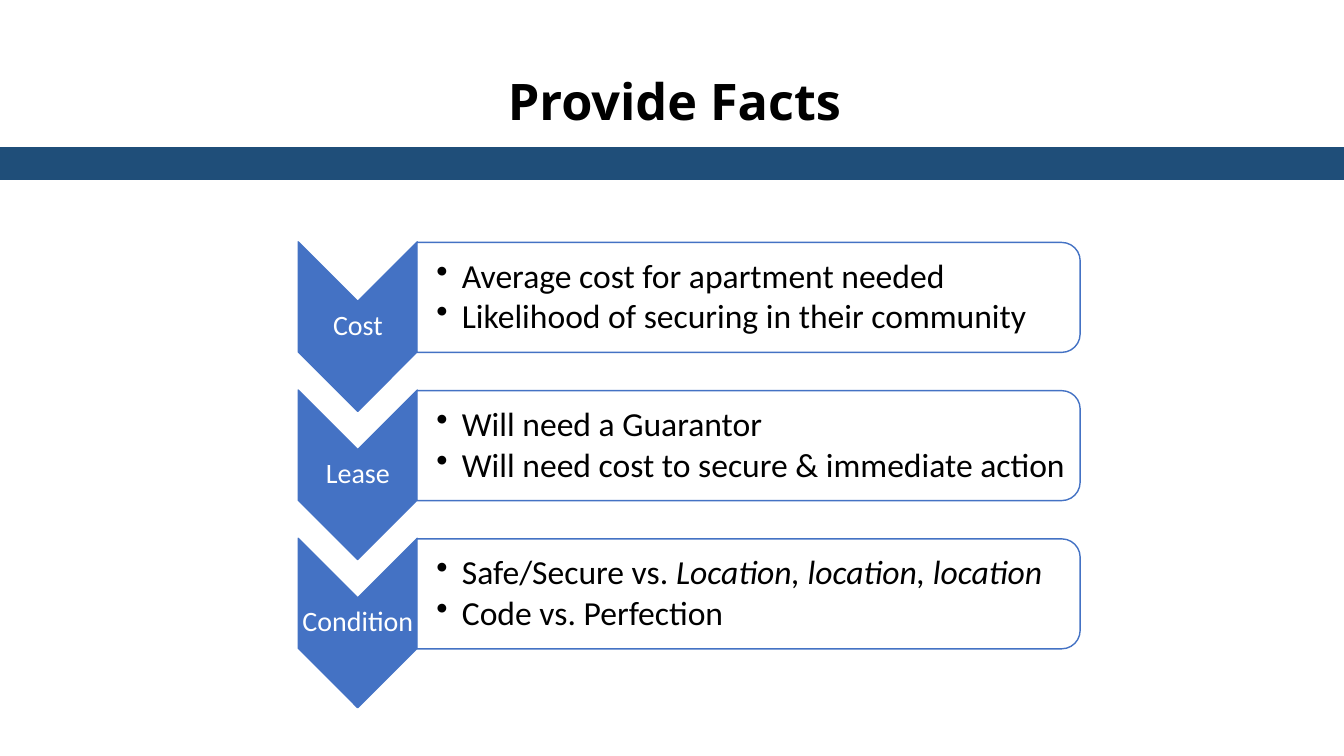
from lxml.etree import SubElement
from pptx import Presentation
from pptx.dml.color import RGBColor
from pptx.enum.shapes import MSO_SHAPE
from pptx.enum.text import MSO_ANCHOR, MSO_AUTO_SIZE, PP_ALIGN
from pptx.oxml.ns import qn
from pptx.util import Cm, Pt

NAVY, BLUE, WHITE, BLACK = "1F4E79", "4472C4", "FFFFFF", "000000"
FACTS = [
    ("Cost", [[("Average cost for apartment needed", False)],
              [("Likelihood of securing in their community", False)]]),
    ("Lease", [[("Will need a Guarantor", False)],
               [("Will need cost to secure & immediate action", False)]]),
    ("Condition", [[("Safe/Secure vs. ", False), ("Location, location, location", True)],
                   [("Code vs. Perfection", False)]]),
]
ROW_PITCH = 3.735


def add_block(kind, left, top, width, height, fill, line):
    block = page.shapes.add_shape(kind, Cm(left), Cm(top), Cm(width), Cm(height))
    block.shadow.inherit = False
    block.fill.solid()
    block.fill.fore_color.rgb = RGBColor.from_string(fill)
    block.line.color.rgb = RGBColor.from_string(line)
    block.line.width = Pt(1)
    return block


def add_span(para, text, font, size, colour):
    span = para.add_run()
    span.text = text
    span.font.name = font
    span.font.size = Pt(size)
    span.font.color.rgb = RGBColor.from_string(colour)
    return span


deck = Presentation()
deck.slide_width, deck.slide_height = Cm(33.87), Cm(19.05)
page = deck.slides.add_slide(deck.slide_layouts[5])

title = page.shapes.title
title.left, title.top, title.width, title.height = Cm(1.47), Cm(1.63), Cm(31.06), Cm(3.68)
title.text_frame.vertical_anchor = MSO_ANCHOR.TOP
title.text_frame.auto_size = MSO_AUTO_SIZE.NONE
title_para = title.text_frame.paragraphs[0]
title_para.alignment = PP_ALIGN.CENTER
add_span(title_para, "Provide Facts", "Open Sans", 36, BLACK).font.bold = True

add_block(MSO_SHAPE.RECTANGLE, 0, 3.73, 33.87, 0.8, NAVY, NAVY)

for row, (name, points) in enumerate(FACTS):
    shift = row * ROW_PITCH

    chevron = add_block(MSO_SHAPE.CHEVRON, 6.88, 6.73 + shift, 4.27, 3, BLUE, BLUE)
    chevron.rotation = 90

    label = page.shapes.add_textbox(Cm(7.52), Cm(7.59 + shift), Cm(3), Cm(1.27))
    frame = label.text_frame
    frame.word_wrap = True
    frame.vertical_anchor = MSO_ANCHOR.MIDDLE
    frame.margin_left = frame.margin_right = frame.margin_top = frame.margin_bottom = Cm(0.03)
    para = frame.paragraphs[0]
    para.alignment = PP_ALIGN.CENTER
    para.line_spacing = 0.9
    add_span(para, name, "Calibri", 20, WHITE)

    card = add_block(MSO_SHAPE.ROUND_2_SAME_RECTANGLE, 17.48, -0.86 + shift, 2.77, 16.71, WHITE, BLUE)
    card.rotation = 90
    card_colour = card.fill._xPr.find(qn("a:solidFill")).find(qn("a:srgbClr"))
    SubElement(card_colour, qn("a:alpha"), val="90000")

    box = page.shapes.add_textbox(Cm(10.52), Cm(6.25 + shift), Cm(16.59), Cm(2.51))
    frame = box.text_frame
    frame.word_wrap = True
    frame.vertical_anchor = MSO_ANCHOR.MIDDLE
    frame.margin_left = Cm(0.48)
    frame.margin_right = frame.margin_top = frame.margin_bottom = Cm(0.05)
    for number, point in enumerate(points):
        para = frame.add_paragraph() if number else frame.paragraphs[0]
        properties = para._p.get_or_add_pPr()
        properties.set("marL", str(Cm(0.64)))
        properties.set("indent", str(-Cm(0.64)))
        SubElement(properties, qn("a:buChar"), char="•")
        para.level = 1
        para.line_spacing = 0.9
        para.space_after = Pt(3)
        for text, italic in point:
            add_span(para, text, "Calibri", 24, BLACK).font.italic = italic

deck.save("out.pptx")
